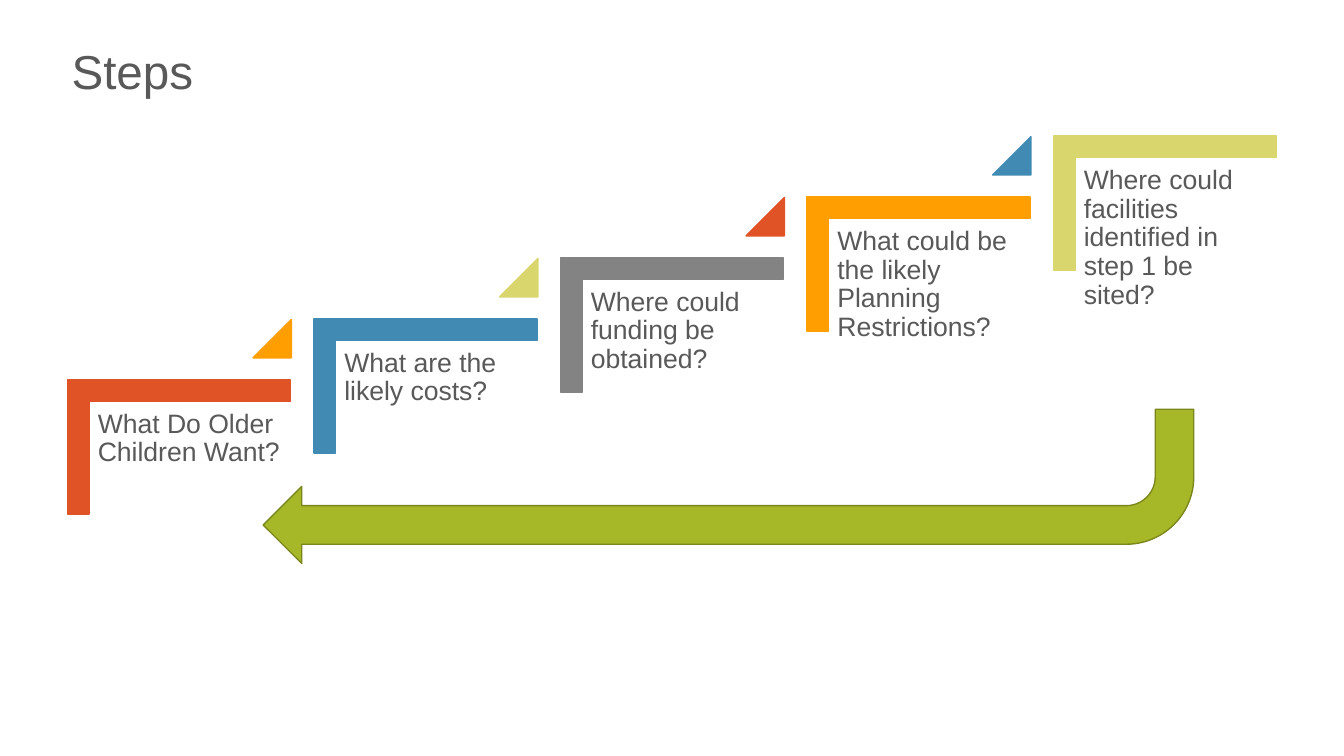
from pptx import Presentation
from pptx.dml.color import RGBColor
from pptx.enum.shapes import MSO_SHAPE
from pptx.enum.text import MSO_ANCHOR, MSO_AUTO_SIZE, PP_ALIGN
from pptx.util import Inches, Pt

CORNER = MSO_SHAPE.CORNER
WEDGE = MSO_SHAPE.ISOSCELES_TRIANGLE
BENT = MSO_SHAPE.BENT_ARROW
TOP, BOTTOM = MSO_ANCHOR.TOP, MSO_ANCHOR.BOTTOM
LEFT = PP_ALIGN.LEFT
FIXED = MSO_AUTO_SIZE.NONE

RED = RGBColor(0xDF, 0x53, 0x27)
BLUE = RGBColor(0x41, 0x8A, 0xB3)
GRAY = RGBColor(0x83, 0x83, 0x83)
ORANGE = RGBColor(0xFE, 0x9E, 0x00)
YELLOW = RGBColor(0xD9, 0xD6, 0x6D)
GREEN = RGBColor(0xA6, 0xB7, 0x27)
OLIVE = RGBColor(0x7B, 0x87, 0x1D)
TEXT = RGBColor(0x59, 0x59, 0x59)

TITLE = "Steps"
STEPS = [
    ("What Do Older Children Want?", RED),
    ("What are the likely costs?", BLUE),
    ("Where could funding be obtained?", GRAY),
    ("What could be the likely Planning Restrictions?", ORANGE),
    ("Where could facilities identified in step 1 be sited?", YELLOW),
]
FIRST, LAST = (0.89, 3.99), (10.67, 1.57)
LABEL = (2, 1.75)
PAD = 0.08


def place(*box):
    """Turn a box in inches into lengths."""
    return [Inches(v) for v in box]


def write(shape, text, size, anchor, pad=None):
    """Fill a shape with one left-aligned paragraph."""
    frame = shape.text_frame
    look = {"word_wrap": True, "auto_size": FIXED, "vertical_anchor": anchor}
    if pad is not None:
        for side in ("left", "top", "right", "bottom"):
            look["margin_" + side] = Inches(pad)
    for key, value in look.items():
        setattr(frame, key, value)
    frame.text = text
    para = frame.paragraphs[0]
    para.alignment = LEFT
    para.line_spacing = 0.9
    font = para.runs[0].font
    for key, value in {"name": "Arial", "size": Pt(size)}.items():
        setattr(font, key, value)
    font.color.rgb = TEXT


def draw(slide, kind, box, fill, line, turn=0, adjust=()):
    """Add a filled preset shape."""
    shape = slide.shapes.add_shape(kind, *place(*box))
    shape.shadow.inherit = False
    shape.rotation = turn
    for i, value in enumerate(adjust):
        shape.adjustments[i] = value
    shape.fill.solid()
    shape.fill.fore_color.rgb = fill
    shape.line.color.rgb = line
    shape.line.width = Pt(1)


def main():
    """Build the stair of steps and the arrow back."""
    deck = Presentation()
    deck.slide_width, deck.slide_height = place(13.33, 7.5)
    slide = deck.slides.add_slide(deck.slide_layouts[5])

    title = slide.shapes.title
    title.left, title.top, title.width, title.height = place(0.61, 0.33, 12.06, 0.71)
    write(title, TITLE, 34, BOTTOM)

    count = len(STEPS)
    dx, dy = [(b - a) / (count - 1) for a, b in zip(FIRST, LAST)]
    for i, (text, color) in enumerate(STEPS):
        x, y = FIRST[0] + i * dx, FIRST[1] + i * dy
        draw(slide, CORNER, (x + 0.22, y - 0.66, 1.33, 2.21), color, color,
             90, (0.161, 0.161))
        label = slide.shapes.add_textbox(*place(x, y, *LABEL))
        write(label, text, 19, TOP, PAD)
        if i < count - 1:
            tint = STEPS[(i + 3) % count][1]
            draw(slide, WEDGE, (x + 1.62, y - 0.82, 0.38, 0.38), tint, tint,
                 adjust=(1,))

    draw(slide, BENT, (2.61, 4.06, 9.23, 1.53), GREEN, OLIVE, 180)
    deck.save("out.pptx")


if __name__ == "__main__":
    main()
